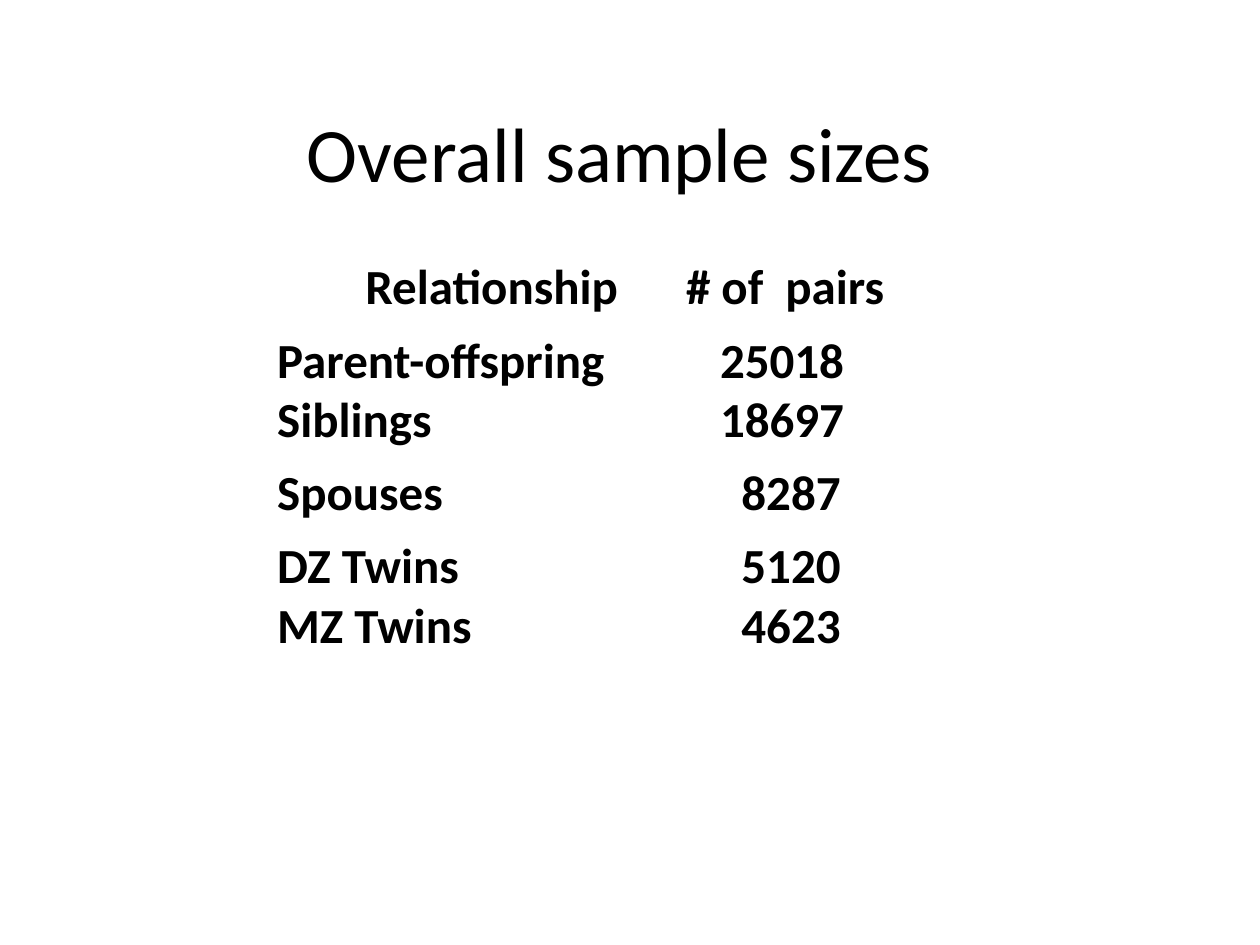
import pptx
import pptx.util
import pptx.dml.color
import pptx.enum.text
import pptx.oxml
import pptx.oxml.ns
from pptx.util import Inches

COLORS = {"text": "000000", "paper": "FFFFFF"}
FONT = "Calibri"

# Each row: height, then (left margin, lines) for both columns
ROWS = [
    (0.58, (1.15, ["Relationship"]), (0.36, ["# of  pairs"])),
    (1.05, (0.45, ["Parent-offspring", "Siblings"]), (0.63, ["25018", "18697"])),
    (0.58, (0.45, ["Spouses"]), (0.8, ["8287"])),
    (1.05, (0.45, ["DZ Twins", "MZ Twins"]), (0.8, ["5120", "4623"])),
    (0.4, (0.1, []), (0.1, [])),
    (0.4, (0.1, []), (0.1, [])),
]


def rgb(name):
    return pptx.dml.color.RGBColor.from_string(COLORS[name])


def format_text(text_frame, size, bold=False):
    for paragraph in text_frame.paragraphs:
        for run in paragraph.runs:
            run.font.name = FONT
            run.font.size = pptx.util.Pt(size)
            run.font.bold = bold
            run.font.color.rgb = rgb("text")


def set_borders(cell, bottom_width):
    properties = cell._tc.get_or_add_tcPr()
    widths = {"lnL": 1, "lnR": 1, "lnT": 1, "lnB": bottom_width}
    for position, (side, width) in enumerate(widths.items()):
        border = pptx.oxml.parse_xml(
            f'<a:{side} {pptx.oxml.ns.nsdecls("a")} w="{pptx.util.Pt(width)}">'
            f'<a:solidFill><a:srgbClr val="{COLORS["paper"]}"/></a:solidFill></a:{side}>'
        )
        properties.insert(position, border)


def add_title(slide, text):
    title = slide.shapes.title
    title.left, title.top = Inches(0.42), Inches(0.58)
    title.width, title.height = Inches(9), Inches(1.25)
    title.text_frame.text = text
    title.text_frame.vertical_anchor = pptx.enum.text.MSO_ANCHOR.MIDDLE
    title.text_frame.paragraphs[0].alignment = pptx.enum.text.PP_ALIGN.CENTER
    format_text(title.text_frame, 44)


def fill_cell(cell, margin, lines, bottom_width):
    cell.margin_left = Inches(margin)
    cell.fill.solid()
    cell.fill.fore_color.rgb = rgb("paper")
    set_borders(cell, bottom_width)
    cell.text_frame.text = "\n".join(lines)
    format_text(cell.text_frame, 28, bold=True)


def add_sample_table(slide):
    total_height = sum(row[0] for row in ROWS)
    samples = slide.shapes.add_table(
        len(ROWS), 2, Inches(1.75), Inches(2), Inches(6.67), Inches(total_height)
    ).table
    for row_index, (height, *cells) in enumerate(ROWS):
        samples.rows[row_index].height = Inches(height)
        bottom_width = 3 if row_index == 0 else 1
        for column_index, (margin, lines) in enumerate(cells):
            fill_cell(samples.cell(row_index, column_index), margin, lines, bottom_width)


def main():
    presentation = pptx.Presentation()
    presentation.slide_width = Inches(10)
    presentation.slide_height = Inches(7.5)
    slide = presentation.slides.add_slide(presentation.slide_layouts[5])
    add_title(slide, "Overall sample sizes")
    add_sample_table(slide)
    presentation.save("out.pptx")


if __name__ == "__main__":
    main()
